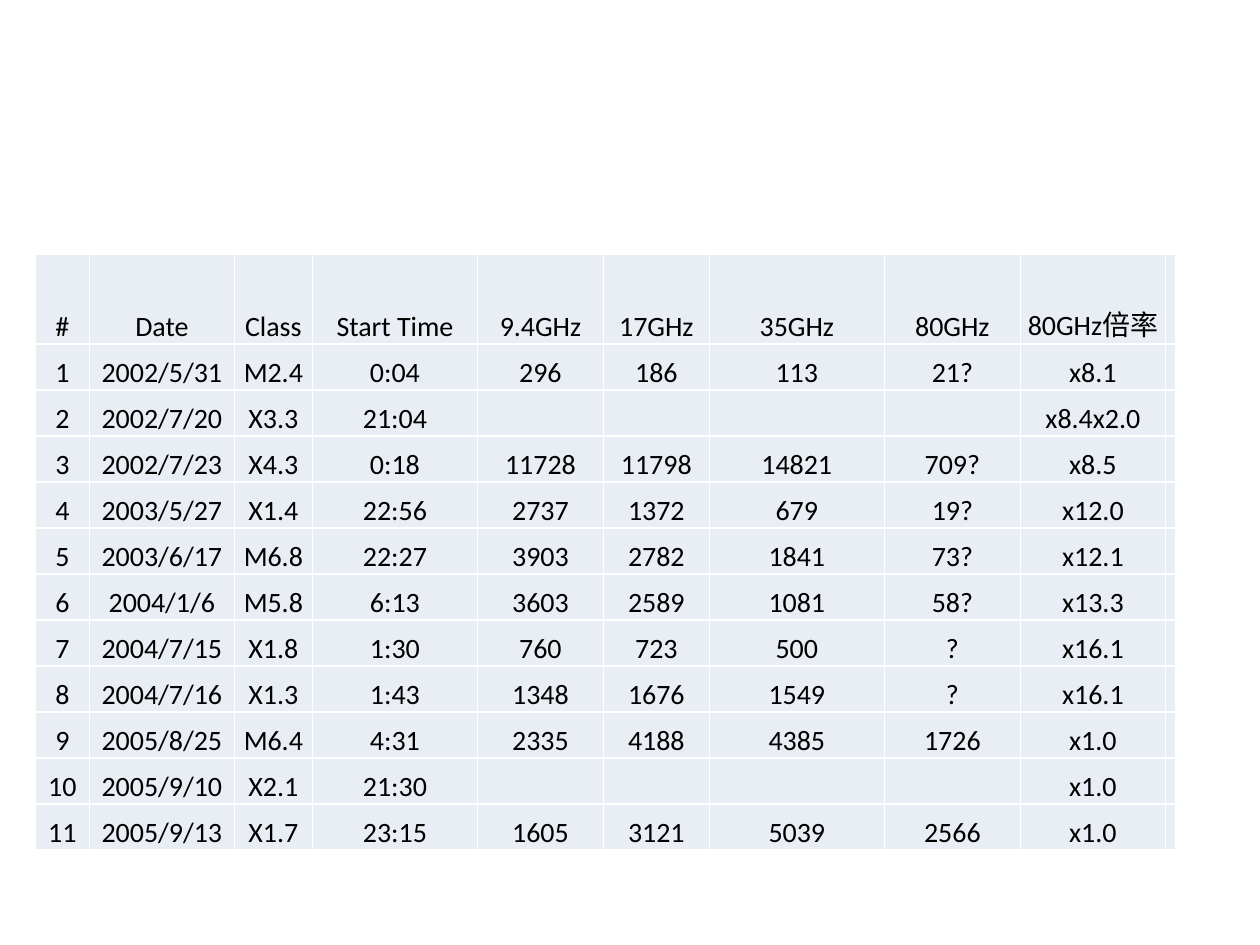
from lxml.etree import SubElement
from pptx import Presentation
from pptx.dml.color import RGBColor
from pptx.enum.text import MSO_ANCHOR as Anchor, PP_ALIGN as Align
from pptx.oxml.ns import qn
from pptx.util import Inches, Pt

BLACK = RGBColor(0x00, 0x00, 0x00)
WHITE = RGBColor(0xFF, 0xFF, 0xFF)
PALE = RGBColor(0xE9, 0xED, 0xF4)

COLS = [0.43, 1.15, 0.62, 1.31, 1, 0.84, 1.39, 1.08, 1.15, 0.08]
HEAD_H, ROW_H = 0.71, 0.365
FLARES = [
    ["#", "Date", "Class", "Start Time", "9.4GHz", "17GHz", "35GHz", "80GHz", "80GHz倍率"],
    ["1", "2002/5/31", "M2.4", "0:04", "296", "186", "113", "21?", "x8.1"],
    ["2", "2002/7/20", "X3.3", "21:04", "", "", "", "", "x8.4x2.0"],
    ["3", "2002/7/23", "X4.3", "0:18", "11728", "11798", "14821", "709?", "x8.5"],
    ["4", "2003/5/27", "X1.4", "22:56", "2737", "1372", "679", "19?", "x12.0"],
    ["5", "2003/6/17", "M6.8", "22:27", "3903", "2782", "1841", "73?", "x12.1"],
    ["6", "2004/1/6", "M5.8", "6:13", "3603", "2589", "1081", "58?", "x13.3"],
    ["7", "2004/7/15", "X1.8", "1:30", "760", "723", "500", "?", "x16.1"],
    ["8", "2004/7/16", "X1.3", "1:43", "1348", "1676", "1549", "?", "x16.1"],
    ["9", "2005/8/25", "M6.4", "4:31", "2335", "4188", "4385", "1726", "x1.0"],
    ["10", "2005/9/10", "X2.1", "21:30", "", "", "", "", "x1.0"],
    ["11", "2005/9/13", "X1.7", "23:15", "1605", "3121", "5039", "2566", "x1.0"],
]


class SlideBuilder:
    """Holds the table style and the current slide."""

    def __init__(self, slide, font="Calibri", size=16):
        self.s, self.font, self.size = slide, font, size

    def table(self, left, top, cols, heights, rows):
        frame = self.s.shapes.add_table(
            len(rows), len(cols), Inches(left), Inches(top),
            Inches(sum(cols)), Inches(sum(heights)))
        tbl = frame.table
        tbl.first_row = tbl.horz_banding = False
        for col, width in zip(tbl.columns, cols):
            col.width = Inches(width)
        for i, (row, height) in enumerate(zip(rows, heights)):
            tbl.rows[i].height = Inches(height)
            for j in range(len(cols)):
                self.cell(tbl.cell(i, j), row[j] if j < len(row) else "")

    def cell(self, cell, text):
        cell.margin_left = cell.margin_right = cell.margin_top = Inches(0.01)
        cell.margin_bottom = 0
        cell.vertical_anchor = Anchor.BOTTOM
        self.borders(cell)
        cell.fill.solid()
        cell.fill.fore_color.rgb = PALE
        p = cell.text_frame.paragraphs[0]
        p.alignment = Align.CENTER
        p.font.name, p.font.size = self.font, Pt(self.size)
        p.font.color.rgb = BLACK
        if text:
            p.add_run().text = text

    def borders(self, cell):
        tc_pr = cell._tc.get_or_add_tcPr()
        for side in ("lnL", "lnR", "lnT", "lnB"):
            ln = SubElement(tc_pr, qn(f"a:{side}"), w=str(Pt(1)))
            fill = SubElement(ln, qn("a:solidFill"))
            SubElement(fill, qn("a:srgbClr"), val=str(WHITE))


def main():
    prs = Presentation()
    prs.slide_width, prs.slide_height = Inches(10), Inches(7.5)
    builder = SlideBuilder(prs.slides.add_slide(prs.slide_layouts[6]))
    heights = [HEAD_H] + [ROW_H] * (len(FLARES) - 1)
    builder.table(0.28, 2.02, COLS, heights, FLARES)
    prs.save("out.pptx")


if __name__ == "__main__":
    main()
